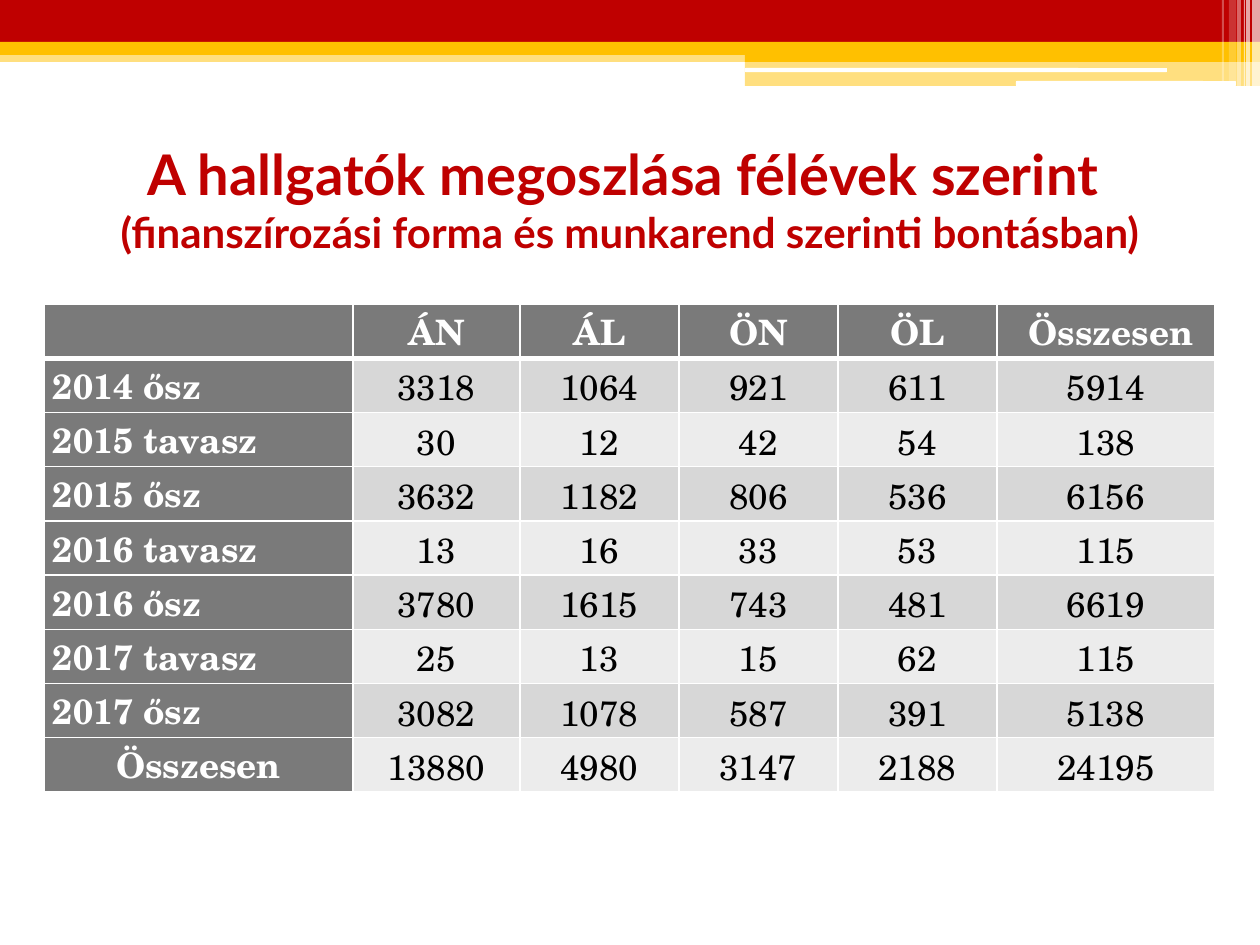
import pptx
import pptx.dml.color
import pptx.enum.shapes
import pptx.enum.text
import pptx.oxml
import pptx.oxml.ns
import pptx.util
from lxml import etree

PX = 914400 / 126
RED, GOLD, WHITE, GREY = "BF0000", "FFC000", "FFFFFF", "7A7A7A"
SHAPE = pptx.enum.shapes.MSO_SHAPE
ANCHOR = pptx.enum.text.MSO_ANCHOR
ALIGN = pptx.enum.text.PP_ALIGN


def paint(fill, color, alpha=100):
    fill.solid()
    fill.fore_color.rgb = pptx.dml.color.RGBColor.from_string(color)
    if alpha < 100:
        clr = fill._xPr.find(".//" + pptx.oxml.ns.qn("a:srgbClr"))
        etree.SubElement(clr, pptx.oxml.ns.qn("a:alpha"), val=str(alpha * 1000))


def add_text(p, text, font, size, color, bold):
    r = p.add_run()
    r.text = text
    r.font.name = font
    r.font.size = pptx.util.Pt(size)
    r.font.bold = bold
    paint(r.font.fill, color)


prs = pptx.Presentation()
prs.slide_width, prs.slide_height = pptx.util.Inches(10), pptx.util.Inches(7.5)
s = prs.slides.add_slide(prs.slide_layouts[5])

# Header bands and white stripes: left, top, width, height, colour, opacity
bands = [
    (0, 50, 1260, 12, GOLD, 50),
    (0, 0, 1260, 43, RED, 100),
    (0, 42, 1260, 13, GOLD, 100),
    (745, 49, 515, 13, GOLD, 100),
    (745, 61, 515, 25, GOLD, 50),
    (745, 68, 422, 4, WHITE, 100),
    (1016, 81, 220, 5, WHITE, 100),
    (1252, 0, 8, 86, WHITE, 65),
    (1246, 0, 4, 86, WHITE, 65),
    (1244, 0, 1, 86, WHITE, 60),
    (1237, 0, 4, 86, WHITE, 40),
    (1229, 0, 7, 81, WHITE, 20),
    (1222, 0, 2, 81, WHITE, 30),
]
for left, top, width, height, color, alpha in bands:
    rounded = color == WHITE and alpha == 100
    kind = SHAPE.ROUNDED_RECTANGLE if rounded else SHAPE.RECTANGLE
    sp = s.shapes.add_shape(kind, *(round(v * PX) for v in (left, top, width, height)))
    sp.shadow.inherit = False
    sp.line.fill.background()
    paint(sp.fill, color, alpha)

# Title
title = s.shapes.title
title.left, title.top, title.width, title.height = (round(v * PX) for v in (63, 125, 1134, 147))
tf = title.text_frame
tf.word_wrap = True
tf.auto_size = pptx.enum.text.MSO_AUTO_SIZE.NONE
tf.vertical_anchor = ANCHOR.MIDDLE
p = tf.paragraphs[0]
p.alignment = ALIGN.CENTER
add_text(p, "A hallgatók megoszlása félévek szerint ", "Lato", 32, RED, True)
p.add_line_break()
add_text(p, "(finanszírozási forma és munkarend szerinti bontásban)", "Lato", 24, RED, True)

# Table
rows = [
    ["", "ÁN", "ÁL", "ÖN", "ÖL", " Összesen"],
    ["2014 ősz", "3318", "1064", "921", "611", "5914"],
    ["2015 tavasz", "30", "12", "42", "54", "138"],
    ["2015 ősz", "3632", "1182", "806", "536", "6156"],
    ["2016 tavasz", "13", "16", "33", "53", "115"],
    ["2016 ősz", "3780", "1615", "743", "481", "6619"],
    ["2017 tavasz", "25", "13", "15", "62", "115"],
    ["2017 ősz", "3082", "1078", "587", "391", "5138"],
    ["Összesen", "13880", "4980", "3147", "2188", "24195"],
]
col_widths = [309, 167, 159, 159, 159, 218]
row_height = 54
frame = s.shapes.add_table(
    len(rows), len(col_widths), round(44 * PX), round(304 * PX),
    round(sum(col_widths) * PX), round(row_height * len(rows) * PX))
table = frame.table
for col, width in zip(table.columns, col_widths):
    col.width = round(width * PX)

for i, row in enumerate(rows):
    table.rows[i].height = round(row_height * PX)
    for j, text in enumerate(row):
        cell = table.cell(i, j)
        heading = i == 0 or j == 0
        cell.margin_left = cell.margin_right = round(9 * PX)
        cell.margin_top = cell.margin_bottom = 0
        cell.vertical_anchor = ANCHOR.MIDDLE if i == 0 else ANCHOR.BOTTOM

        # White grid, thicker under the header row
        tc_pr = cell._tc.get_or_add_tcPr()
        for side in ("lnL", "lnR", "lnT", "lnB"):
            thick = (i, side) in ((0, "lnB"), (1, "lnT"))
            width = pptx.util.Pt(3 if thick else 1)
            tc_pr.append(pptx.oxml.parse_xml(
                f'<a:{side} {pptx.oxml.ns.nsdecls("a")} w="{width}"><a:solidFill>'
                f'<a:srgbClr val="{WHITE}"/></a:solidFill></a:{side}>'))
        paint(cell.fill, GREY if heading else "D7D7D7" if i % 2 else "ECECEC")

        if text:
            p = cell.text_frame.paragraphs[0]
            left_label = j == 0 and i < len(rows) - 1
            p.alignment = ALIGN.LEFT if left_label else ALIGN.CENTER
            add_text(p, text, "TeX Gyre Schola", 20, WHITE if heading else "000000", heading)

prs.save("out.pptx")
